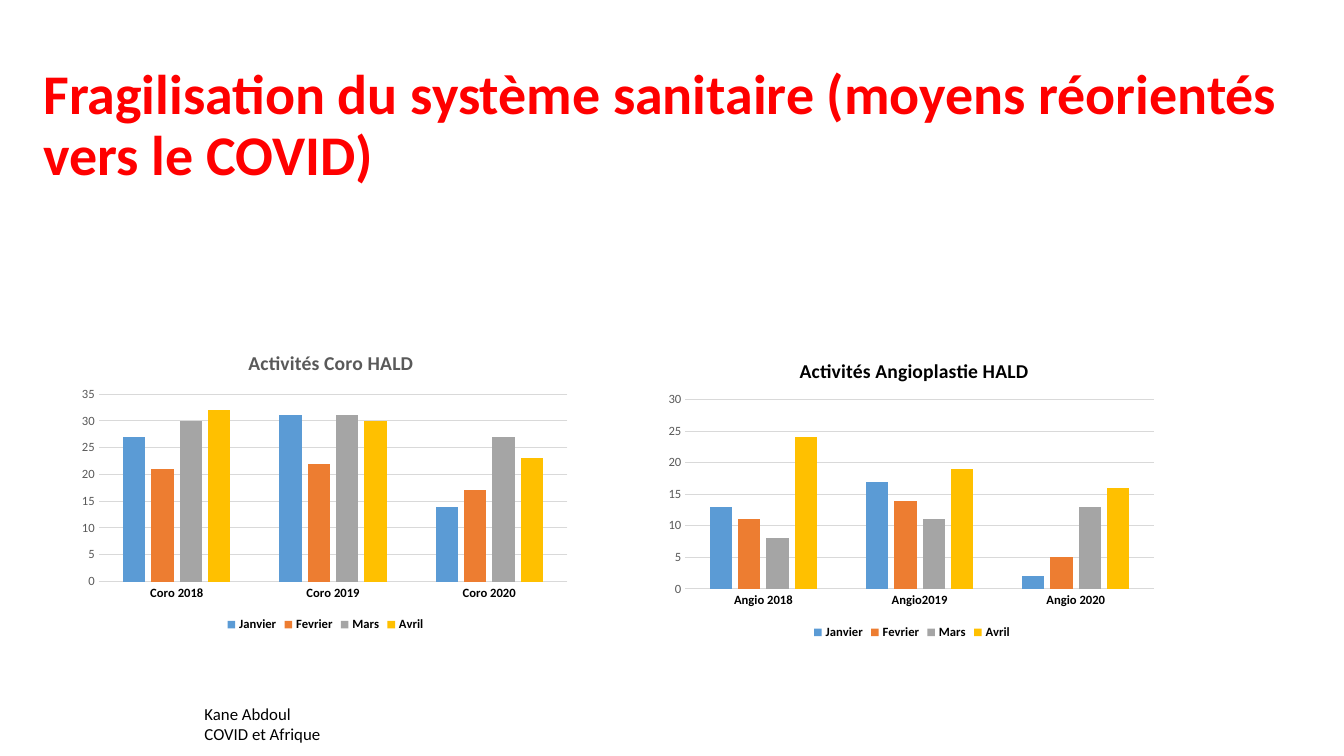
import pptx
import pptx.chart.data
import pptx.dml.color
import pptx.enum.chart
import pptx.enum.text
import pptx.oxml
import pptx.util
from pptx.util import Pt

FONT = "Calibri"
MONTHS = {"Janvier": "5B9BD5", "Fevrier": "ED7D31", "Mars": "A5A5A5", "Avril": "FFC000"}
CHARTS = [
    {"title": "Activités Coro HALD", "title_color": "595959", "title_at": (0.34, 0.04),
     "box": (52.5, 238.3, 360, 216),
     "years": ["Coro 2018", "Coro 2019", "Coro 2020"],
     "values": [(27, 31, 14), (21, 22, 17), (30, 31, 27), (32, 30, 23)], "top": 35},
    {"title": "Activités Angioplastie HALD", "title_color": "000000", "title_at": (0.27, 0.05),
     "box": (471.5, 241.9, 360, 218),
     "years": ["Angio 2018", "Angio2019", "Angio 2020"],
     "values": [(13, 17, 2), (11, 14, 5), (8, 11, 13), (24, 19, 16)], "top": 30},
]


def style(font, size, color, bold=False):
    font.name = FONT
    font.size = Pt(size)
    font.bold = bold
    font.color.rgb = pptx.dml.color.RGBColor.from_string(color)


def layout(target, **places):
    """Return a manual chart layout; sizes and positions are fractions of the chart."""
    inner = '<c:layoutTarget val="inner"/>' if target == "inner" else ""
    modes = '<c:xMode val="edge"/><c:yMode val="edge"/>'
    values = "".join(f'<c:{name} val="{value}"/>' for name, value in places.items())
    return pptx.oxml.parse_xml(
        '<c:layout xmlns:c="http://schemas.openxmlformats.org/drawingml/2006/chart">'
        f"<c:manualLayout>{inner}{modes}{values}</c:manualLayout></c:layout>")


deck = pptx.Presentation()
deck.slide_width, deck.slide_height = Pt(960), Pt(540)
page = deck.slides.add_slide(deck.slide_layouts[6])

# Heading and signature
texts = [
    ((24, 44, 912, 343), 40, "FF0000", True, 0.9, 10,
     ["Fragilisation du système sanitaire (moyens réorientés vers le COVID)"]),
    ((139, 499, 520.5, 36), 12, "000000", False, 1, 0,
     ["Kane Abdoul", "COVID et Afrique"]),
]
for place, size, color, bold, spacing, before, lines in texts:
    box = page.shapes.add_textbox(*map(Pt, place))
    frame = box.text_frame
    frame.word_wrap = True
    frame.vertical_anchor = pptx.enum.text.MSO_ANCHOR.TOP
    for index, line in enumerate(lines):
        para = frame.add_paragraph() if index else frame.paragraphs[0]
        para.line_spacing = spacing
        para.space_before = Pt(before)
        span = para.add_run()
        span.text = line
        style(span.font, size, color, bold)

# Monthly activity charts
for activity in CHARTS:
    data = pptx.chart.data.CategoryChartData()
    data.categories = activity["years"]
    for month, values in zip(MONTHS, activity["values"]):
        data.add_series(month, values)
    chart = page.shapes.add_chart(
        pptx.enum.chart.XL_CHART_TYPE.COLUMN_CLUSTERED,
        *map(Pt, activity["box"]), data).chart
    style(chart.font, 10, "000000")

    chart.has_title = True
    span = chart.chart_title.text_frame.paragraphs[0].add_run()
    span.text = activity["title"]
    style(span.font, 14, activity["title_color"], True)
    chart.chart_title.include_in_layout = False
    left, top = activity["title_at"]
    title = chart.chart_title._element
    for old in title.findall(pptx.oxml.ns.qn("c:layout")):
        title.remove(old)
    title.find(pptx.oxml.ns.qn("c:tx")).addnext(layout("outer", x=left, y=top))

    chart.has_legend = True
    chart.legend.position = pptx.enum.chart.XL_LEGEND_POSITION.BOTTOM
    chart.legend.include_in_layout = False
    style(chart.legend.font, 9, "000000", True)

    plot = chart.plots[0]
    plot.gap_width, plot.overlap = 219, -27
    plot.vary_by_categories = False
    for series, color in zip(plot.series, MONTHS.values()):
        series.format.fill.solid()
        series.format.fill.fore_color.rgb = pptx.dml.color.RGBColor.from_string(color)
    area = chart._chartSpace.chart.plotArea
    for old in area.findall(pptx.oxml.ns.qn("c:layout")):
        area.remove(old)
    area.insert(0, layout("inner", x=0.05, y=0.2, w=0.93, h=0.62))

    years, counts = chart.category_axis, chart.value_axis
    style(years.tick_labels.font, 9, "000000", True)
    style(counts.tick_labels.font, 9, "595959")
    counts.minimum_scale, counts.maximum_scale, counts.major_unit = 0, activity["top"], 5
    counts.has_major_gridlines = True
    counts.format.line.fill.background()
    for axis in (years, counts):
        axis.major_tick_mark = pptx.enum.chart.XL_TICK_MARK.NONE
    for line in (years.format.line, counts.major_gridlines.format.line):
        line.width = Pt(0.75)
        line.color.rgb = pptx.dml.color.RGBColor.from_string("D9D9D9")

deck.save("out.pptx")
